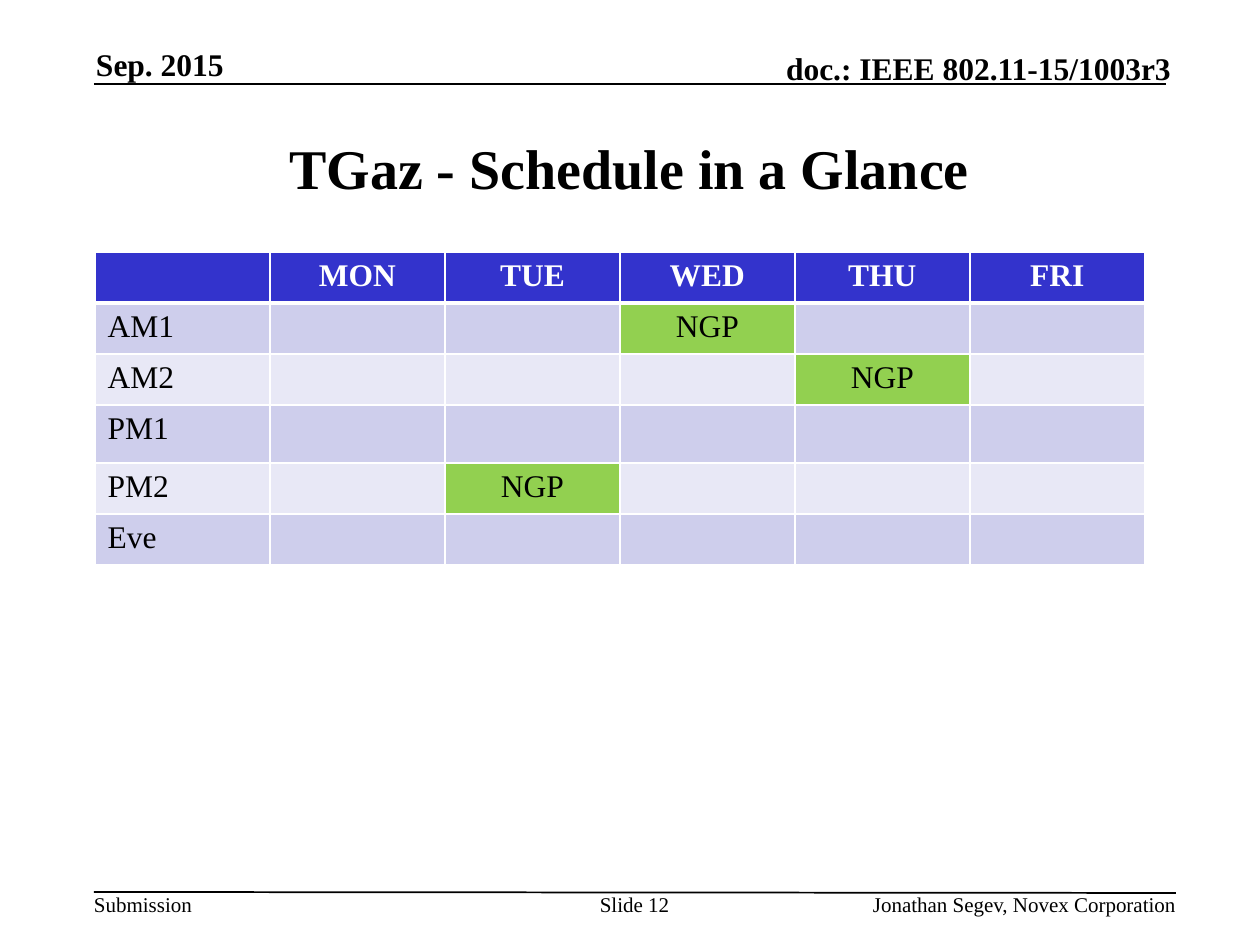
from dataclasses import dataclass

from lxml import etree
from pptx import Presentation
from pptx.dml.color import RGBColor
from pptx.enum.shapes import MSO_CONNECTOR
from pptx.enum.text import MSO_ANCHOR, PP_ALIGN
from pptx.oxml.ns import qn
from pptx.util import Emu, Pt

LEFT, CENTER, RIGHT = PP_ALIGN.LEFT, PP_ALIGN.CENTER, PP_ALIGN.RIGHT
TOP, MIDDLE, BOTTOM = MSO_ANCHOR.TOP, MSO_ANCHOR.MIDDLE, MSO_ANCHOR.BOTTOM
STRAIGHT = MSO_CONNECTOR.STRAIGHT

PIXELS_PER_INCH = 126
FONT = "Times New Roman"
BLACK, WHITE = "000000", "FFFFFF"
HEADER_FILL, BOOKED_FILL = "3333CC", "92D050"
BAND_FILLS = ("CECEEC", "E8E8F6")

# Schedule content: days, time slots with row heights, and booked cells
DAYS = ("MON", "TUE", "WED", "THU", "FRI")
SLOTS = ("AM1", "AM2", "PM1", "PM2", "Eve")
BOOKINGS = {("AM1", "WED"): "NGP", ("AM2", "THU"): "NGP", ("PM2", "TUE"): "NGP"}
COLUMN_WIDTH, ROW_HEIGHT, TALL_ROW_HEIGHT = 175, 51, 58
TALL_SLOT = "PM1"


@dataclass
class Label:
    text: str
    left: int
    top: int
    width: int
    height: int
    size: int = 12
    bold: bool = False
    align: PP_ALIGN = LEFT
    anchor: MSO_ANCHOR = TOP
    wrap: bool = True


@dataclass
class Rule:
    left: int
    start_y: int
    right: int
    end_y: int


LABELS = (
    Label("Sep. 2015", 96, 45, 258, 38, size=18, bold=True, anchor=BOTTOM),
    Label("doc.: IEEE 802.11-15/1003r3", 689, 49, 482, 38, size=18, bold=True,
          align=RIGHT, anchor=BOTTOM),
    Label("TGaz - Schedule in a Glance", 94, 94, 1071, 146, size=32, bold=True,
          align=CENTER, anchor=MIDDLE),
    Label("Submission", 94, 892, 98, 25, wrap=False),
    Label("Slide 12", 598, 892, 73, 50, align=CENTER),
    Label("Jonathan Segev, Novex Corporation", 738, 892, 438, 25, align=RIGHT),
)
RULES = (Rule(94, 84, 1166, 84), Rule(94, 892, 1176, 893))


def px(length: int) -> Emu:
    return Emu(round(length * 914400 / PIXELS_PER_INCH))


def color(value: str) -> RGBColor:
    return RGBColor.from_string(value)


def write_text(frame, text: str, *, size: int = 18, bold: bool = False,
               fill: str = BLACK, align: PP_ALIGN = LEFT) -> None:
    para = frame.paragraphs[0]
    para.alignment = align
    span = para.add_run()
    span.text = text
    span.font.name = FONT
    span.font.size = Pt(size)
    span.font.bold = bold
    span.font.color.rgb = color(fill)


def draw_label(page, label: Label) -> None:
    box = page.shapes.add_textbox(px(label.left), px(label.top),
                                  px(label.width), px(label.height))
    frame = box.text_frame
    frame.margin_left = frame.margin_right = 0
    frame.margin_top = frame.margin_bottom = 0
    frame.word_wrap = label.wrap
    frame.vertical_anchor = label.anchor
    write_text(frame, label.text, size=label.size, bold=label.bold, align=label.align)


def draw_rule(page, rule: Rule) -> None:
    line = page.shapes.add_connector(STRAIGHT, px(rule.left), px(rule.start_y),
                                     px(rule.right), px(rule.end_y))
    line.line.color.rgb = color(BLACK)
    line.line.width = Pt(1)
    etree.SubElement(line._element.spPr, qn("a:effectLst"))


def style_cell(cell, fill: str, top: int = 1, bottom: int = 1) -> None:
    # Borders must come before the fill in the cell properties
    properties = cell._tc.get_or_add_tcPr()
    for side, width in (("L", 1), ("R", 1), ("T", top), ("B", bottom)):
        border = etree.SubElement(properties, qn(f"a:ln{side}"), w=str(Pt(width)))
        solid = etree.SubElement(border, qn("a:solidFill"))
        etree.SubElement(solid, qn("a:srgbClr"), val=WHITE)
    cell.fill.solid()
    cell.fill.fore_color.rgb = color(fill)


def draw_schedule(page) -> None:
    heights = [ROW_HEIGHT] + [TALL_ROW_HEIGHT if slot == TALL_SLOT else ROW_HEIGHT
                              for slot in SLOTS]
    column_count = len(DAYS) + 1
    table = page.shapes.add_table(len(heights), column_count, px(95), px(252),
                                  px(COLUMN_WIDTH * column_count),
                                  px(sum(heights))).table
    for column in table.columns:
        column.width = px(COLUMN_WIDTH)
    for row, height in zip(table.rows, heights):
        row.height = px(height)

    # Header row
    for index, day in enumerate(("",) + DAYS):
        cell = table.cell(0, index)
        style_cell(cell, HEADER_FILL, bottom=3)
        if day:
            write_text(cell.text_frame, day, bold=True, fill=WHITE, align=CENTER)

    # Time slots in alternating bands
    for row_index, slot in enumerate(SLOTS, start=1):
        band = BAND_FILLS[(row_index - 1) % 2]
        top = 3 if row_index == 1 else 1
        name_cell = table.cell(row_index, 0)
        style_cell(name_cell, band, top=top)
        write_text(name_cell.text_frame, slot)
        for column_index, day in enumerate(DAYS, start=1):
            cell = table.cell(row_index, column_index)
            booking = BOOKINGS.get((slot, day))
            style_cell(cell, BOOKED_FILL if booking else band, top=top)
            if booking:
                write_text(cell.text_frame, booking, align=CENTER)


def main() -> None:
    deck = Presentation()
    deck.slide_width, deck.slide_height = px(1260), px(945)
    page = deck.slides.add_slide(deck.slide_layouts[6])
    for rule in RULES:
        draw_rule(page, rule)
    for label in LABELS:
        draw_label(page, label)
    draw_schedule(page)
    deck.save("out.pptx")


if __name__ == "__main__":
    main()
